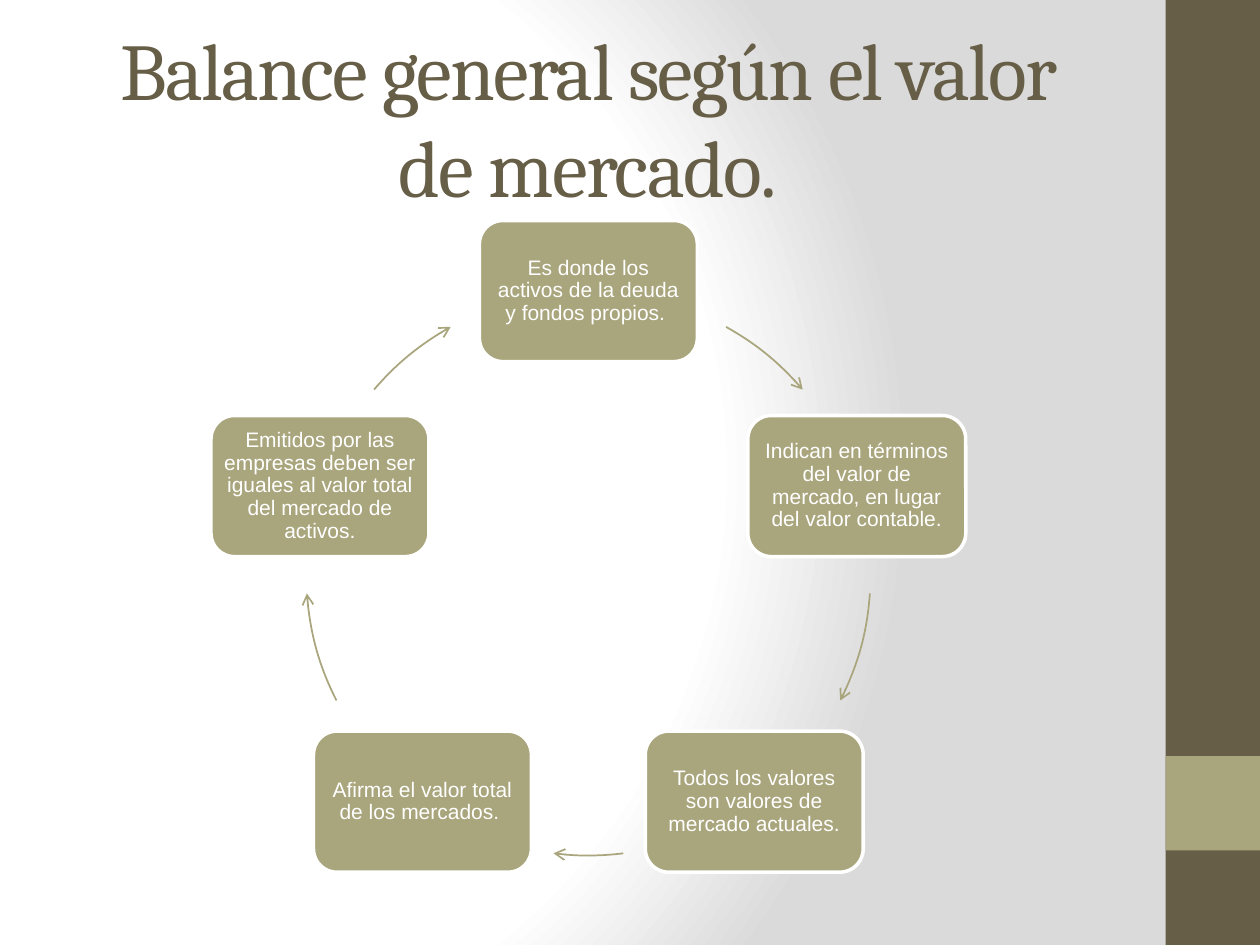
from math import cos, radians, sin

from pptx import Presentation
from pptx.dml.color import RGBColor
from pptx.enum.shapes import MSO_SHAPE
from pptx.enum.text import MSO_ANCHOR, MSO_AUTO_SIZE, PP_ALIGN
from pptx.oxml import parse_xml
from pptx.oxml.ns import nsdecls
from pptx.util import Inches, Pt

BROWN, OLIVE, WHITE, GREY = "675E47", "A9A57C", "FFFFFF", "DADADA"
CENTER_X, CENTER_Y, RADIUS = 4.67, 4.55, 2.24
BOX_WIDTH, BOX_HEIGHT = 1.73, 1.12

STEPS = [
    "Es donde los activos de la deuda y fondos propios. ",
    "Indican en términos del valor de mercado, en lugar del valor contable.",
    "Todos los valores son valores de mercado actuales.",
    "Afirma el valor total de los mercados. ",
    "Emitidos por las empresas deben ser iguales al valor total del mercado de activos.",
]
# Start and end of each arrow, in degrees clockwise from the right
ARROW_ANGLES = [(299.2, 319.4), (4.1, 26.8), (82.9, 97.1), (153.2, 175.9), (220.6, 240.8)]


def color(value):
    return RGBColor.from_string(value)


def set_background(page):
    stops = "".join(
        f'<a:gs pos="{position * 1000}"><a:srgbClr val="{value}"/></a:gs>'
        for position, value in [(0, WHITE), (75, WHITE), (100, GREY)]
    )
    background = parse_xml(
        f'<p:bg {nsdecls("p", "a")}><p:bgPr><a:gradFill rotWithShape="1">'
        f'<a:gsLst>{stops}</a:gsLst><a:path path="circle">'
        '<a:fillToRect l="20000" t="50000" r="100000" b="50000"/></a:path>'
        "</a:gradFill><a:effectLst/></p:bgPr></p:bg>"
    )
    page.element.cSld.insert(0, background)


def write_text(shape, text, anchor, inset, font_format):
    frame = shape.text_frame
    frame.word_wrap = True
    frame.auto_size = MSO_AUTO_SIZE.NONE
    frame.vertical_anchor = anchor
    for side, length in inset.items():
        setattr(frame, f"margin_{side}", Inches(length))
    para = frame.paragraphs[0]
    para.alignment = PP_ALIGN.CENTER
    span = para.add_run()
    span.text = text
    for name, value in font_format.items():
        if name == "color":
            span.font.color.rgb = color(value)
        else:
            setattr(span.font, name, value)
    return para, span


def add_title(page, text):
    title = page.shapes.title
    place = {"left": 0.5, "top": 0.3, "width": 8.33, "height": 1.25}
    for name, length in place.items():
        setattr(title, name, Inches(length))
    font_format = {"name": "Cambria", "size": Pt(46), "color": BROWN}
    _, span = write_text(title, text, MSO_ANCHOR.MIDDLE, {}, font_format)
    span.font._element.set("spc", "-100")


def add_shape(page, kind, left, top, width, height):
    shape = page.shapes.add_shape(
        kind, Inches(left), Inches(top), Inches(width), Inches(height)
    )
    shape.shadow.inherit = False
    return shape


def add_band(page, top, height, fill):
    band = add_shape(page, MSO_SHAPE.RECTANGLE, 9.25, top, 0.75, height)
    band.fill.solid()
    band.fill.fore_color.rgb = color(fill)
    band.line.fill.background()


def set_line(shape, value, width):
    shape.line.color.rgb = color(value)
    shape.line.width = Pt(width)


def add_step(page, text, angle):
    """Add a rounded box centred on the circle at the given angle."""
    left = CENTER_X + RADIUS * cos(radians(angle)) - BOX_WIDTH / 2
    top = CENTER_Y + RADIUS * sin(radians(angle)) - BOX_HEIGHT / 2
    box = add_shape(page, MSO_SHAPE.ROUNDED_RECTANGLE, left, top, BOX_WIDTH, BOX_HEIGHT)
    box.fill.solid()
    box.fill.fore_color.rgb = color(OLIVE)
    set_line(box, WHITE, 2)
    inset = dict.fromkeys(["left", "top", "right", "bottom"], 0.05)
    font_format = {"name": "Arial", "size": Pt(12), "color": WHITE}
    para, _ = write_text(box, text, MSO_ANCHOR.MIDDLE, inset, font_format)
    para.line_spacing = 0.9


def add_curved_arrow(page, start, end):
    arc = add_shape(
        page, MSO_SHAPE.ARC, CENTER_X - RADIUS, CENTER_Y - RADIUS, 2 * RADIUS, 2 * RADIUS
    )
    # Angles are stored in 60000ths of a degree, adjustments in 100000ths
    arc.adjustments[0] = start * 0.6
    arc.adjustments[1] = end * 0.6
    arc.fill.background()
    set_line(arc, OLIVE, 1)
    arrowhead = parse_xml(f'<a:tailEnd {nsdecls("a")} type="arrow"/>')
    arc.line._get_or_add_ln().append(arrowhead)


def main():
    deck = Presentation()
    deck.slide_width, deck.slide_height = Inches(10), Inches(7.5)
    page = deck.slides.add_slide(deck.slide_layouts[5])
    set_background(page)
    add_band(page, 0, 7.5, BROWN)
    add_band(page, 6, 0.75, OLIVE)
    add_title(page, "Balance general según el valor de mercado.")
    for index, (text, angles) in enumerate(zip(STEPS, ARROW_ANGLES)):
        add_step(page, text, -90 + index * 360 / len(STEPS))
        add_curved_arrow(page, *angles)
    deck.save("out.pptx")


if __name__ == "__main__":
    main()
